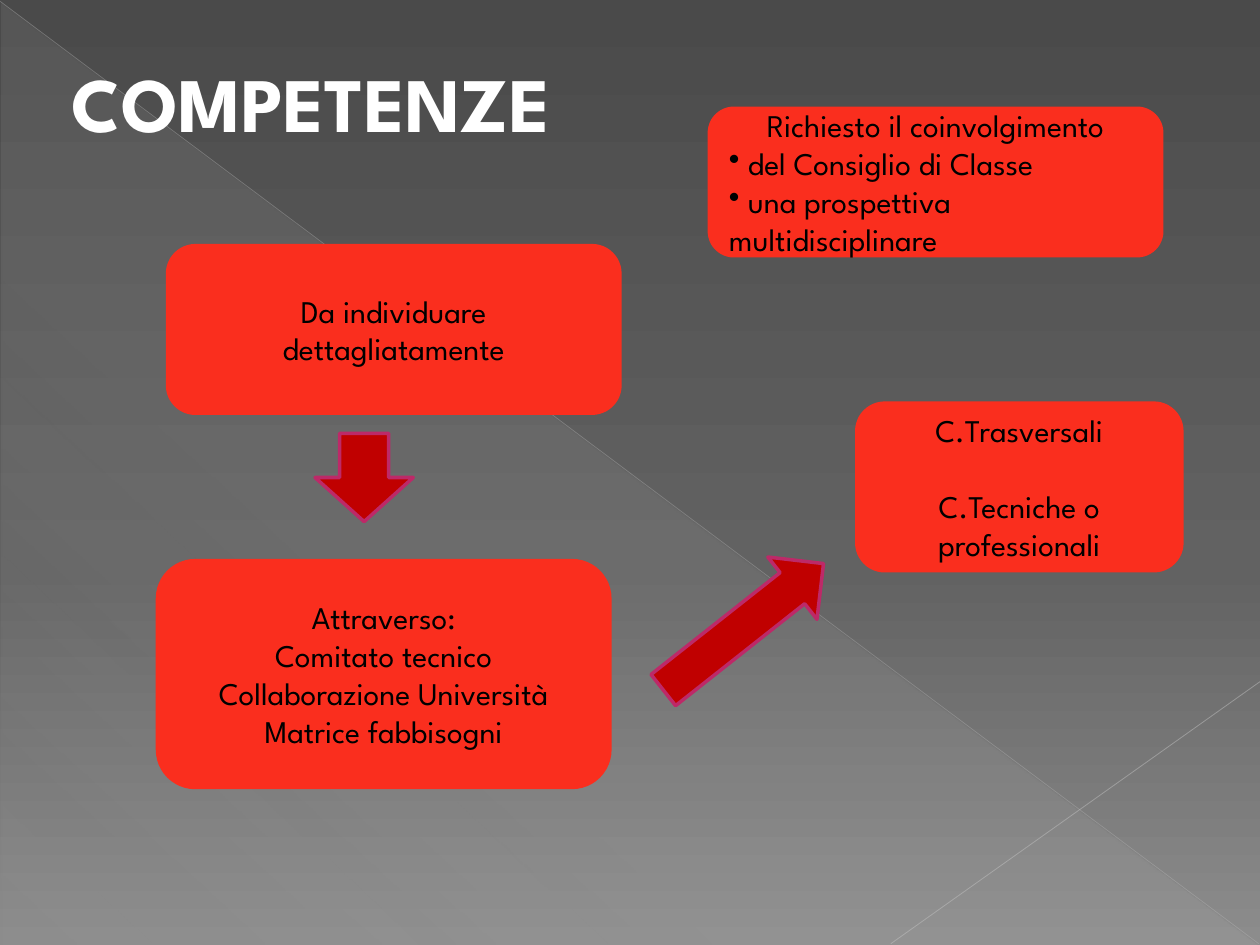
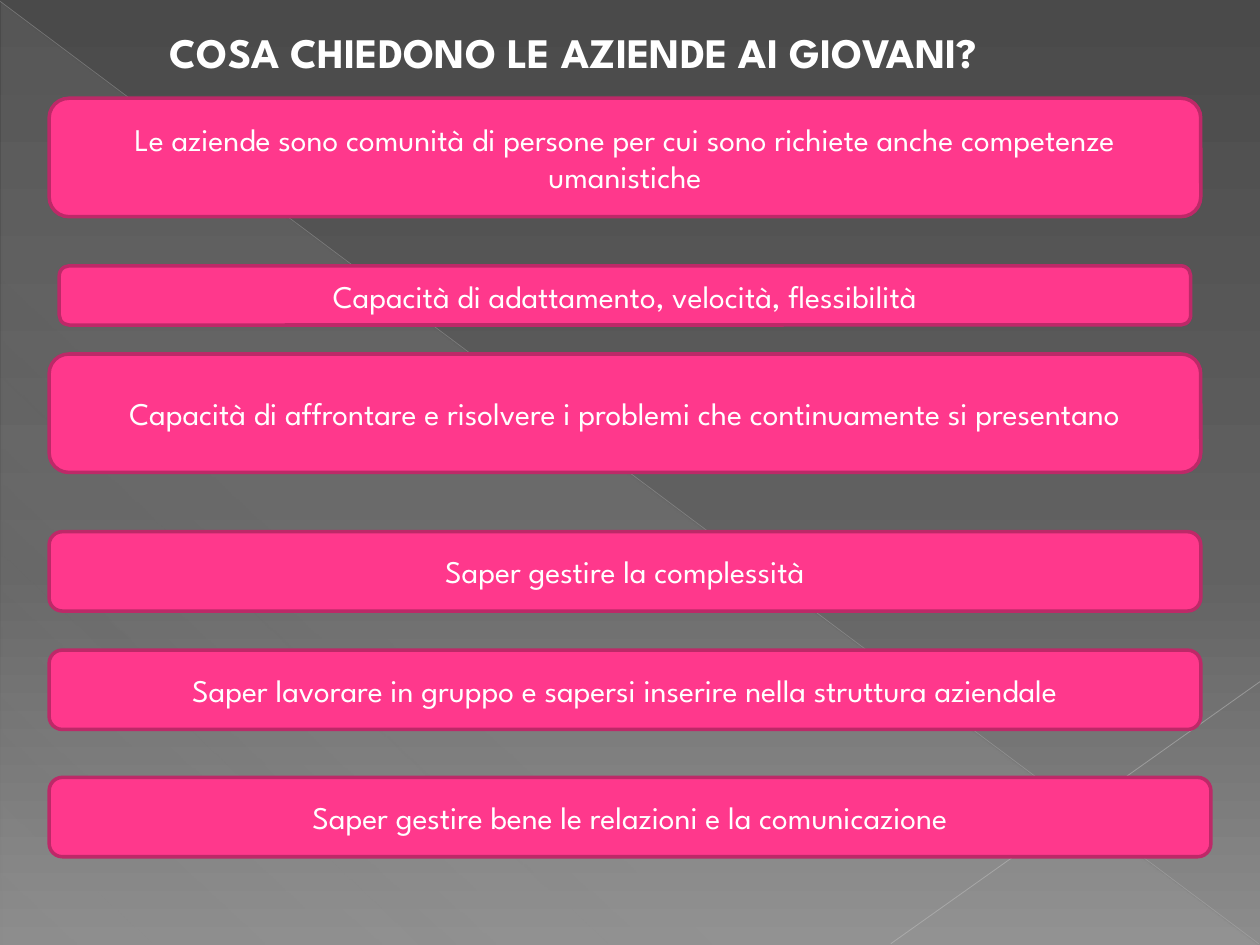
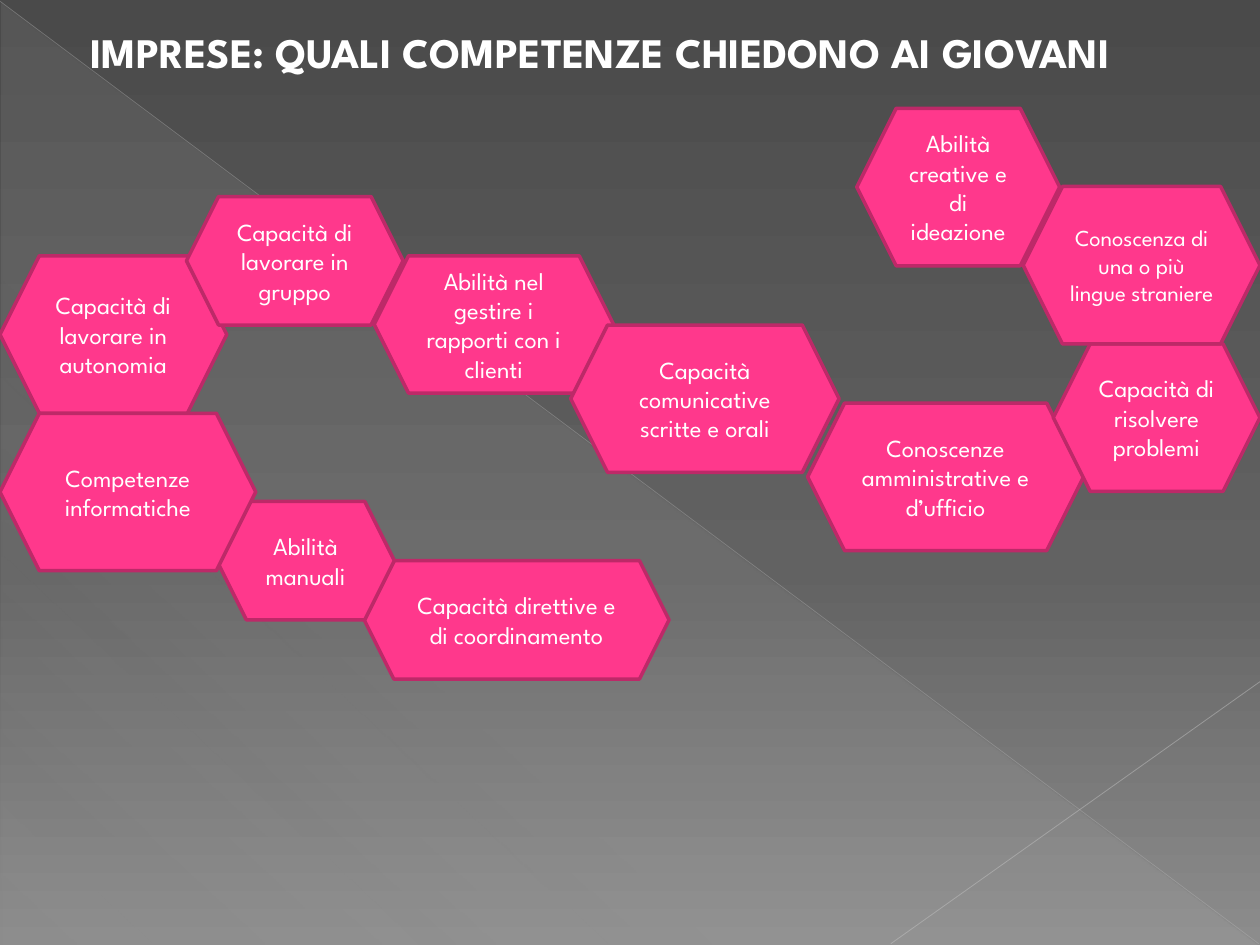
"""Build three slides on the competences that companies ask of young people."""
from dataclasses import dataclass

from lxml.etree import SubElement
from pptx import Presentation
from pptx.dml.color import RGBColor
from pptx.enum.shapes import MSO_CONNECTOR, MSO_SHAPE
from pptx.enum.text import MSO_ANCHOR, PP_ALIGN
from pptx.oxml.ns import qn
from pptx.util import Inches, Pt


@dataclass(frozen=True)
class Theme:
    font: str = "League Spartan"
    white: str = "FFFFFF"
    black: str = "000000"
    red: str = "FA2E1E"
    dark_red: str = "C00000"
    pink: str = "FF388C"
    plum: str = "BD2968"
    outline: float = 2
    large_title: float = 44
    title: float = 24
    body: float = 18
    label: float = 14
    small_label: float = 13
    blank_line: float = 21.5


THEME = Theme()

BACKGROUND_STOPS = [(0, "4A4A4A", 100), (60, "626262", 100), (100, "8C8C8C", 100)]
TRIANGLE_STOPS = [(0, "D2D2D2", 10), (70, "D2D2D2", 8), (100, "D2D2D2", 1)]
DIAGONALS = [
    ((0, 0.01, 9.99, 7.49), "BFBFBF", 0.39, 35),
    ((10, 5.41, 7.07, 7.49), "C6C6C6", 0.47, 45),
]

TITLES = [
    ("COMPETENZE", (0.47, 0.39, 4.61, 0.84), THEME.large_title),
    ("COSA CHIEDONO LE AZIENDE AI GIOVANI?", (1.25, 0.16, 7.34, 0.5), THEME.title),
    ("IMPRESE: QUALI COMPETENZE CHIEDONO AI GIOVANI", (0.62, 0.16, 9.14, 0.5), THEME.title),
]

INVOLVEMENT = (
    (5.63, 0.86, 3.59, 1.17),
    ["Richiesto il coinvolgimento", " del Consiglio di Classe", " una prospettiva multidisciplinare"],
)
IDENTIFICATION = ((1.33, 1.95, 3.59, 1.33), ["Da individuare dettagliatamente"])
METHODS = (
    (1.25, 4.45, 3.59, 1.8),
    ["Attraverso:", "Comitato tecnico", "Collaborazione Università", "Matrice fabbisogni"],
)
COMPETENCE_TYPES = ((6.8, 3.2, 2.58, 1.33), ["C.Trasversali", "C.Tecniche o professionali"])
ARROWS = [
    (MSO_SHAPE.DOWN_ARROW, (2.5, 3.44, 0.78, 0.7), 0),
    (MSO_SHAPE.RIGHT_ARROW, (5.09, 4.66, 1.62, 0.63), 321.7),
]

REQUESTS = [
    ("Le aziende sono comunità di persone per cui sono richiete anche competenze umanistiche",
     (0.39, 0.78, 9.14, 0.94)),
    ("Capacità di adattamento, velocità, flessibilità", (0.47, 2.11, 8.98, 0.47)),
    ("Capacità di affrontare e risolvere i problemi che continuamente si presentano",
     (0.39, 2.81, 9.14, 0.94)),
    ("Saper gestire la complessità", (0.39, 4.22, 9.14, 0.63)),
    ("Saper lavorare in gruppo e sapersi inserire nella struttura aziendale",
     (0.39, 5.16, 9.14, 0.63)),
    ("Saper gestire bene le relazioni e la comunicazione", (0.39, 6.17, 9.22, 0.63)),
]

SKILLS = [
    ("Capacità direttive e di coordinamento", (2.89, 4.45, 2.42, 0.94), THEME.label),
    ("Abilità manuali", (1.72, 3.98, 1.41, 0.94), THEME.label),
    ("Competenze informatiche", (0, 3.28, 2.03, 1.25), THEME.label),
    ("Capacità di lavorare in autonomia", (0, 2.03, 1.8, 1.25), THEME.label),
    ("Capacità di lavorare in gruppo", (1.48, 1.56, 1.72, 1.02), THEME.label),
    ("Abilità nel gestire i rapporti con i clienti", (2.97, 2.03, 1.9, 1.09), THEME.label),
    ("Capacità comunicative scritte e orali", (4.53, 2.58, 2.13, 1.17), THEME.label),
    ("Conoscenze amministrative e d’ufficio", (6.41, 3.2, 2.19, 1.17), THEME.label),
    ("Capacità di risolvere problemi", (8.36, 2.73, 1.64, 1.17), THEME.label),
    ("Conoscenza di una o più lingue straniere", (8.12, 1.48, 1.88, 1.25), THEME.small_label),
    ("Abilità creative e di ideazione", (6.8, 0.86, 1.61, 1.25), THEME.label),
]


def inches(lengths):
    return [Inches(length) for length in lengths]


def set_alpha(color_element, percent):
    SubElement(color_element, qn("a:alpha"), val=str(percent * 1000))


def set_gradient(fill, element, stops, angle):
    fill.gradient()
    gradient = element.find(".//" + qn("a:gradFill"))
    stop_list = gradient.find(qn("a:gsLst"))
    for stop in list(stop_list):
        stop_list.remove(stop)
    for position, color, opacity in stops:
        stop = SubElement(stop_list, qn("a:gs"), pos=str(position * 1000))
        set_alpha(SubElement(stop, qn("a:srgbClr"), val=color), opacity)
    gradient.find(qn("a:lin")).set("ang", str(angle * 60000))


def write_text(text_frame, lines, size, color, alignment, bold=False):
    text_frame.word_wrap = True
    text_frame.text = "\n".join(lines)
    for paragraph in text_frame.paragraphs:
        paragraph.alignment = alignment
        for run in paragraph.runs:
            run.font.name = THEME.font
            run.font.size = Pt(size)
            run.font.bold = bold
            run.font.color.rgb = RGBColor.from_string(color)


def add_figure(slide, kind, box, fill, outline):
    shape = slide.shapes.add_shape(kind, *inches(box))
    shape.shadow.inherit = False
    shape.fill.solid()
    shape.fill.fore_color.rgb = RGBColor.from_string(fill)
    shape.line.color.rgb = RGBColor.from_string(outline)
    shape.line.width = Pt(THEME.outline)
    return shape


def add_label(slide, kind, box, lines, size, fill, outline, color):
    shape = add_figure(slide, kind, box, fill, outline)
    shape.text_frame.vertical_anchor = MSO_ANCHOR.MIDDLE
    write_text(shape.text_frame, lines, size, color, PP_ALIGN.CENTER)
    return shape.text_frame.paragraphs


def add_red_box(slide, box, lines):
    return add_label(slide, MSO_SHAPE.ROUNDED_RECTANGLE, box, lines, THEME.body,
                     THEME.red, THEME.red, THEME.black)


def add_pink_label(slide, kind, box, text, size):
    add_label(slide, kind, box, [text], size, THEME.pink, THEME.plum, THEME.white)


def add_bullet(paragraph):
    paragraph.alignment = PP_ALIGN.LEFT
    SubElement(paragraph._p.get_or_add_pPr(), qn("a:buChar"), char="•")


def add_backdrop(slide):
    set_gradient(slide.background.fill, slide.element, BACKGROUND_STOPS, 90)
    triangle = slide.shapes.add_shape(MSO_SHAPE.RIGHT_TRIANGLE, *inches((0.01, 0.02, 9.98, 7.48)))
    triangle.shadow.inherit = False
    triangle.line.fill.background()
    set_gradient(triangle.fill, triangle.element, TRIANGLE_STOPS, 133)
    for ends, color, width, opacity in DIAGONALS:
        diagonal = slide.shapes.add_connector(MSO_CONNECTOR.STRAIGHT, *inches(ends))
        diagonal.line.color.rgb = RGBColor.from_string(color)
        diagonal.line.width = Pt(width)
        properties = diagonal.element.spPr
        set_alpha(properties.find(".//" + qn("a:srgbClr")), opacity)
        SubElement(properties, qn("a:effectLst"))


def add_titled_slide(presentation, title, box, size):
    slide = presentation.slides.add_slide(presentation.slide_layouts[6])
    add_backdrop(slide)
    text_box = slide.shapes.add_textbox(*inches(box))
    write_text(text_box.text_frame, [title], size, THEME.white, PP_ALIGN.LEFT, bold=True)
    return slide


def fill_competences(slide):
    for paragraph in add_red_box(slide, *INVOLVEMENT)[1:]:
        add_bullet(paragraph)
    add_red_box(slide, *IDENTIFICATION)
    add_red_box(slide, *METHODS)
    add_red_box(slide, *COMPETENCE_TYPES)[1].space_before = Pt(THEME.blank_line)
    for kind, box, rotation in ARROWS:
        add_figure(slide, kind, box, THEME.dark_red, THEME.plum).rotation = rotation


def fill_requests(slide):
    for text, box in REQUESTS:
        add_pink_label(slide, MSO_SHAPE.ROUNDED_RECTANGLE, box, text, THEME.body)


def fill_skills(slide):
    for text, box, size in SKILLS:
        add_pink_label(slide, MSO_SHAPE.HEXAGON, box, text, size)


def main():
    presentation = Presentation()
    presentation.slide_width, presentation.slide_height = inches((10, 7.5))
    for title, fill_slide in zip(TITLES, (fill_competences, fill_requests, fill_skills)):
        fill_slide(add_titled_slide(presentation, *title))
    presentation.save("out.pptx")


if __name__ == "__main__":
    main()
